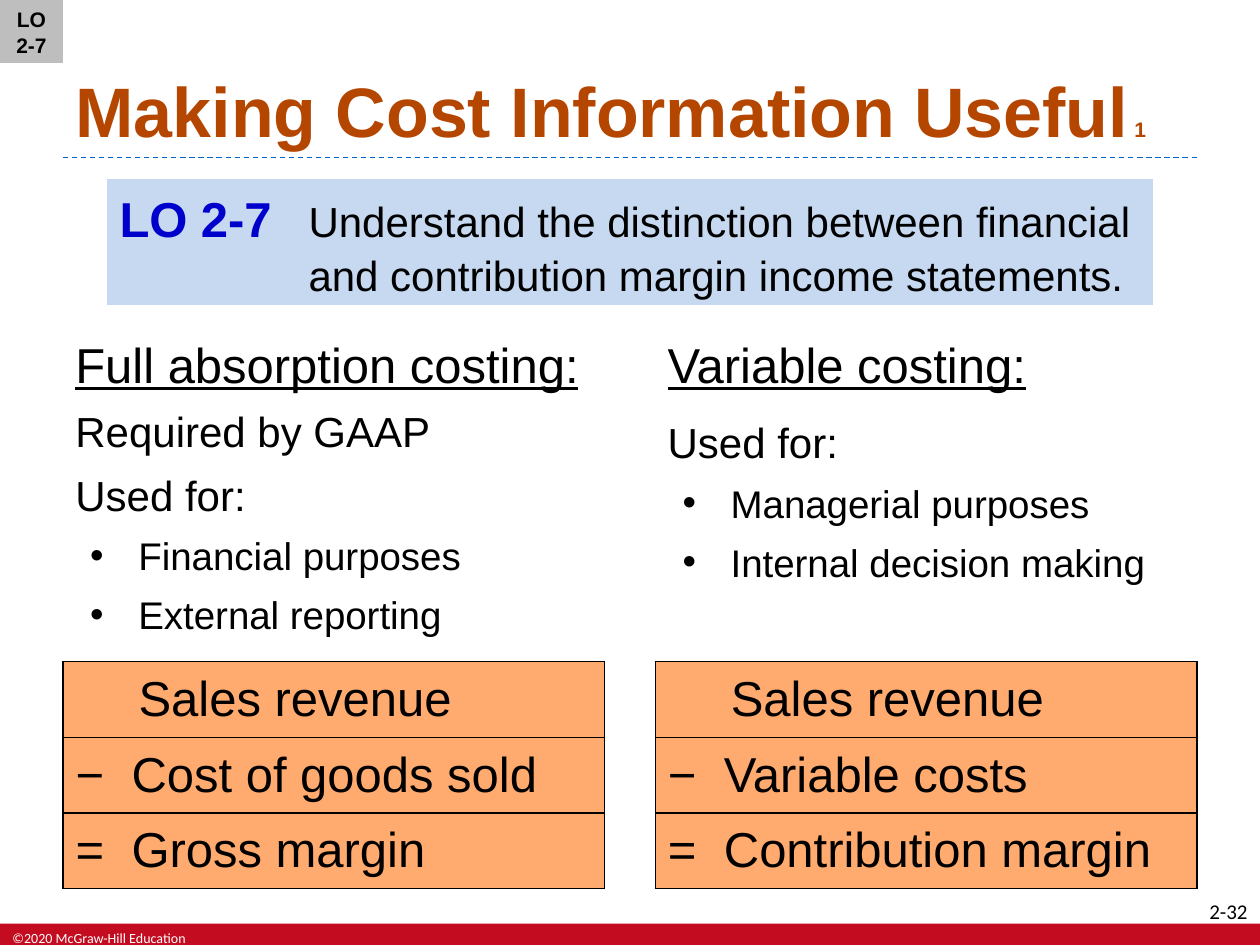
from lxml.etree import SubElement
from pptx import Presentation
from pptx.dml.color import RGBColor
from pptx.enum.dml import MSO_LINE
from pptx.enum.shapes import MSO_CONNECTOR, MSO_SHAPE
from pptx.enum.text import MSO_ANCHOR, MSO_AUTO_SIZE, PP_ALIGN
from pptx.oxml.ns import qn
from pptx.util import Cm, Pt

COLORS = {
    "black": "000000", "white": "FFFFFF", "title": "B44600", "objective": "0000CC",
    "band": "C6D9F1", "badge": "BEBEBE", "footer": "C30C20", "rule": "0064C8",
    "cell": "FFAA6E",
}
MARGIN, COLUMN_WIDTH = 1.27, 10.92


def add_box(left, top, width, height, fill=None):
    """Add a wrapped text box, or a filled rectangle when fill is given."""
    place = Cm(left), Cm(top), Cm(width), Cm(height)
    if fill:
        box = slide.shapes.add_shape(MSO_SHAPE.RECTANGLE, *place)
        box.shadow.inherit = False
        box.fill.solid()
        box.fill.fore_color.rgb = RGBColor.from_string(COLORS[fill])
        box.line.fill.background()
    else:
        box = slide.shapes.add_textbox(*place)
    box.text_frame.word_wrap = True
    box.text_frame.vertical_anchor = MSO_ANCHOR.TOP
    return box.text_frame


def write(paragraph, text, size, color="black", bold=False, font="Arial",
          align=PP_ALIGN.LEFT, margin=0, indent=0):
    """Append a formatted run and set the paragraph's alignment and indent."""
    paragraph.alignment = align
    properties = paragraph._p.get_or_add_pPr()
    properties.set("marL", str(Cm(margin)))
    properties.set("indent", str(Cm(indent)))
    run = paragraph.add_run()
    run.text = text
    run.font.name, run.font.size, run.font.bold = font, Pt(size), bold
    run.font.color.rgb = RGBColor.from_string(COLORS[color])
    return run


prs = Presentation()
prs.slide_width, prs.slide_height = Cm(25.4), Cm(19.05)
slide = prs.slides.add_slide(prs.slide_layouts[5])

# Footer and rule
add_box(0, 18.62, 25.4, 0.43, "footer")
copyright_line = add_box(0, 18.62, 4.06, 0.43)
write(copyright_line.paragraphs[0], "©2020 McGraw-Hill Education", 8, "white", font="Calibri")
page_number = add_box(24.03, 17.98, 1.37, 0.51)
write(page_number.paragraphs[0], "2-32", 12, font="Calibri", align=PP_ALIGN.RIGHT)

rule = slide.shapes.add_connector(
    MSO_CONNECTOR.STRAIGHT, Cm(MARGIN), Cm(3.18), Cm(25.4 - MARGIN), Cm(3.18))
rule.line.color.rgb = RGBColor.from_string(COLORS["rule"])
rule.line.width = Pt(0.75)
rule.line.dash_style = MSO_LINE.DASH
SubElement(rule._element.spPr, qn("a:effectLst"))

# Title
title = slide.shapes.title
title.left, title.top, title.width, title.height = Cm(MARGIN), Cm(0.13), Cm(22.86), Cm(3.05)
title.text_frame.auto_size = MSO_AUTO_SIZE.NONE
title.text_frame.vertical_anchor = MSO_ANCHOR.BOTTOM
heading = title.text_frame.paragraphs[0]
write(heading, "Making Cost Information Useful", 40, "title", bold=True)
write(heading, " 1", 12, "title", bold=True)

# Learning objective
objective = add_box(2.16, 3.61, 21.08, 2.54, "band").paragraphs[0]
objective.line_spacing = 1.05
write(objective, "LO 2-7\t", 28, "objective", bold=True)
write(objective, "Understand the distinction between financial and contribution margin "
      "income statements.", 24, margin=3.81, indent=-3.81)

badge = add_box(0, 0, 1.27, 1.27, "badge")
badge.vertical_anchor = MSO_ANCHOR.MIDDLE
badge.paragraphs[0].line_spacing = 1.05
write(badge.paragraphs[0], "LO 2-7", 12, bold=True, align=PP_ALIGN.CENTER)

# Each method: left edge, heading, statements, space before them, uses, income statement
methods = [
    (MARGIN, "Full absorption costing:", ["Required by GAAP", "Used for:"], 0,
     ["Financial purposes", "External reporting"],
     ["Sales revenue", "−\tCost of goods sold", "=\tGross margin"]),
    (13.21, "Variable costing:", ["Used for:"], 6,
     ["Managerial purposes", "Internal decision making"],
     ["Sales revenue", "−\tVariable costs", "=\tContribution margin"]),
]
for left, method, statements, space_before, uses, income_lines in methods:
    description = add_box(left, 6.55, COLUMN_WIDTH, 6.35)
    write(description.paragraphs[0], method, 28).font.underline = True
    for statement in statements:
        paragraph = description.add_paragraph()
        paragraph.space_before = Pt(space_before)
        write(paragraph, statement, 24)
    for use in uses:
        paragraph = description.add_paragraph()
        properties = paragraph._p.get_or_add_pPr()
        SubElement(properties, qn("a:buFont"), typeface="Arial")
        SubElement(properties, qn("a:buChar"), char="•")
        write(paragraph, use, 22, margin=1.27, indent=-0.97)
    for paragraph in description.paragraphs:
        paragraph.line_spacing = 1.05
        paragraph.space_after = Pt(6)

    table = slide.shapes.add_table(
        len(income_lines), 1, Cm(left), Cm(13.34), Cm(COLUMN_WIDTH), Cm(4.57)).table
    table.first_row = table.horz_banding = False
    for row, income_line in enumerate(income_lines):
        cell = table.cell(row, 0)
        cell.vertical_anchor = MSO_ANCHOR.MIDDLE
        signed = "\t" in income_line
        write(cell.text_frame.paragraphs[0], income_line, 28,
              margin=1.13 if signed else 1.27, indent=-1.13 if signed else 0)
        cell_properties = cell._tc.get_or_add_tcPr()
        for side in ("a:lnL", "a:lnR", "a:lnT", "a:lnB"):
            border = SubElement(cell_properties, qn(side), w=str(Pt(1)))
            border_fill = SubElement(border, qn("a:solidFill"))
            SubElement(border_fill, qn("a:srgbClr"), val=COLORS["black"])
        cell.fill.solid()
        cell.fill.fore_color.rgb = RGBColor.from_string(COLORS["cell"])

prs.save("out.pptx")
